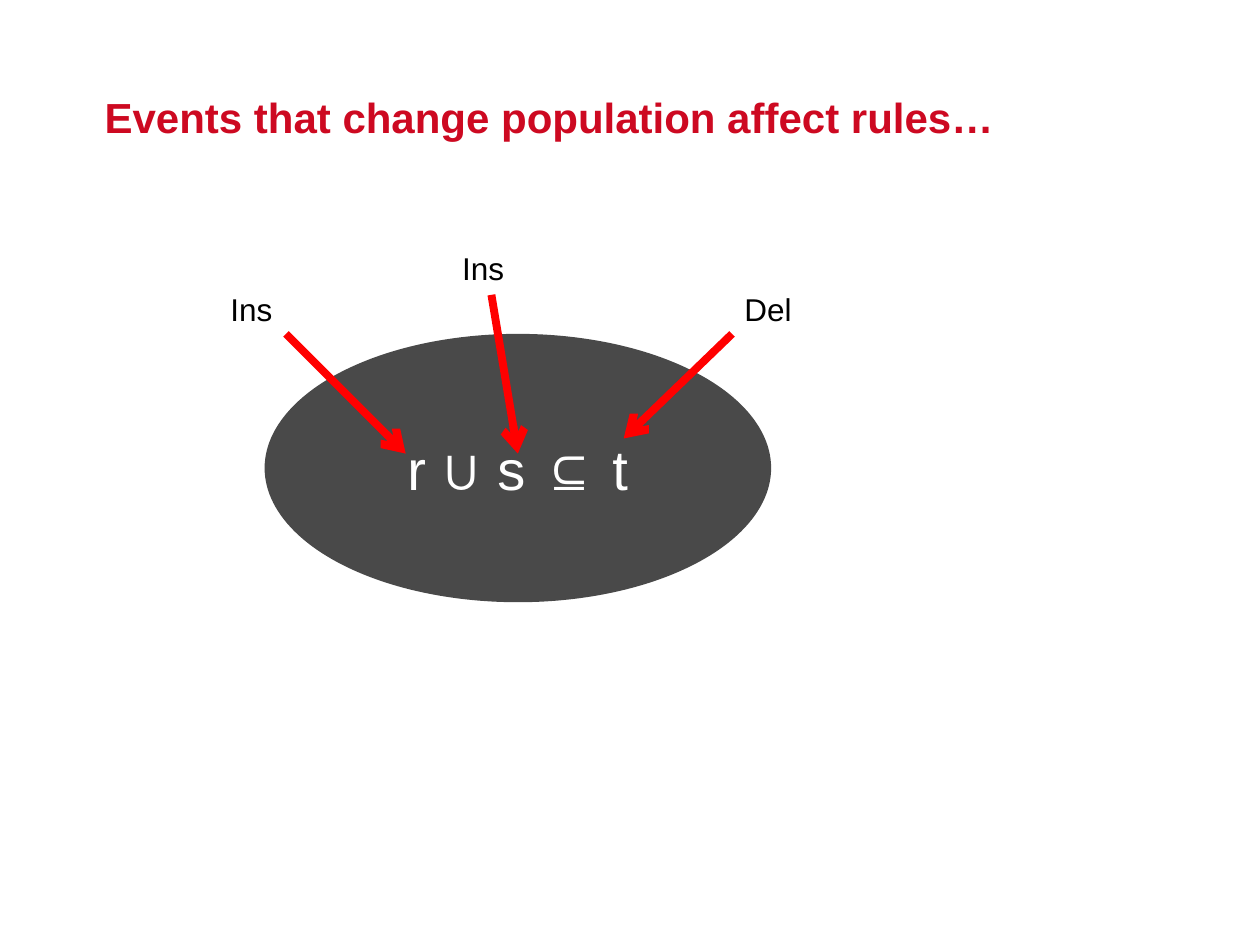
from dataclasses import dataclass

from lxml import etree
from pptx import Presentation
from pptx.dml.color import RGBColor
from pptx.enum.shapes import MSO_CONNECTOR, MSO_SHAPE
from pptx.enum.text import MSO_ANCHOR, MSO_AUTO_SIZE, PP_ALIGN
from pptx.oxml.ns import qn
from pptx.util import Inches, Pt


@dataclass(frozen=True)
class Theme:
    font: str = "Arial"
    title_color: str = "CD0921"
    ellipse_color: str = "494949"
    rule_color: str = "FFFFFF"
    label_color: str = "000000"
    arrow_color: str = "FF0000"
    title_size: float = 24
    rule_size: float = 32
    label_size: float = 18
    arrow_width: float = 4.5


class SlideBuilder:
    def __init__(self, slide, theme):
        self.slide = slide
        self.theme = theme

    def set_text(self, shape, text, size, color, align=PP_ALIGN.LEFT, bold=False):
        shape.text_frame.text = text
        paragraph = shape.text_frame.paragraphs[0]
        paragraph.alignment = align
        for span in paragraph.runs:
            span.font.name = self.theme.font
            span.font.size = Pt(size)
            span.font.bold = bold
            span.font.color.rgb = RGBColor.from_string(color)

    def title(self, text, left, top, width, height):
        box = self.slide.shapes.title
        box.left, box.top = Inches(left), Inches(top)
        box.width, box.height = Inches(width), Inches(height)
        frame = box.text_frame
        frame.margin_left = frame.margin_right = 0
        frame.margin_top = frame.margin_bottom = 0
        frame.vertical_anchor = MSO_ANCHOR.MIDDLE
        frame.auto_size = MSO_AUTO_SIZE.NONE
        self.set_text(box, text, self.theme.title_size, self.theme.title_color, bold=True)

    def ellipse(self, text, left, top, width, height):
        shape = self.slide.shapes.add_shape(
            MSO_SHAPE.OVAL, Inches(left), Inches(top), Inches(width), Inches(height)
        )
        shape.shadow.inherit = False
        shape.fill.solid()
        shape.fill.fore_color.rgb = RGBColor.from_string(self.theme.ellipse_color)
        shape.line.fill.background()
        shape.text_frame.vertical_anchor = MSO_ANCHOR.MIDDLE
        self.set_text(shape, text, self.theme.rule_size, self.theme.rule_color, PP_ALIGN.CENTER)

    def arrow(self, start, end):
        connector = self.slide.shapes.add_connector(
            MSO_CONNECTOR.STRAIGHT, *(Inches(value) for value in (*start, *end))
        )
        connector.line.color.rgb = RGBColor.from_string(self.theme.arrow_color)
        connector.line.width = Pt(self.theme.arrow_width)
        properties = connector._element.spPr
        etree.SubElement(properties.find(qn("a:ln")), qn("a:tailEnd"), type="arrow")
        etree.SubElement(properties, qn("a:effectLst"))

    def label(self, text, left, top, width, height=0.4):
        box = self.slide.shapes.add_textbox(
            Inches(left), Inches(top), Inches(width), Inches(height)
        )
        box.text_frame.word_wrap = False
        box.text_frame.auto_size = MSO_AUTO_SIZE.SHAPE_TO_FIT_TEXT
        self.set_text(box, text, self.theme.label_size, self.theme.label_color)


def main():
    deck = Presentation()
    deck.slide_width, deck.slide_height = Inches(10), Inches(7.5)
    page = SlideBuilder(deck.slides.add_slide(deck.slide_layouts[5]), Theme())
    page.title("Events that change population affect rules…", 0.83, 0.3, 7.69, 1.25)
    page.ellipse("r ∪ s ⊆ t", 2.1, 2.65, 4.02, 2.13)
    events = [
        ("Ins", (1.73, 2.25, 0.54), (2.27, 2.65), (3.22, 3.6)),
        ("Ins", (3.57, 1.93, 0.54), (3.9, 2.34), (4.11, 3.6)),
        ("Del", (5.81, 2.25, 0.58), (5.81, 2.65), (4.95, 3.48)),
    ]
    for text, place, start, end in events:
        page.arrow(start, end)
        page.label(text, *place)
    deck.save("out.pptx")


if __name__ == "__main__":
    main()
